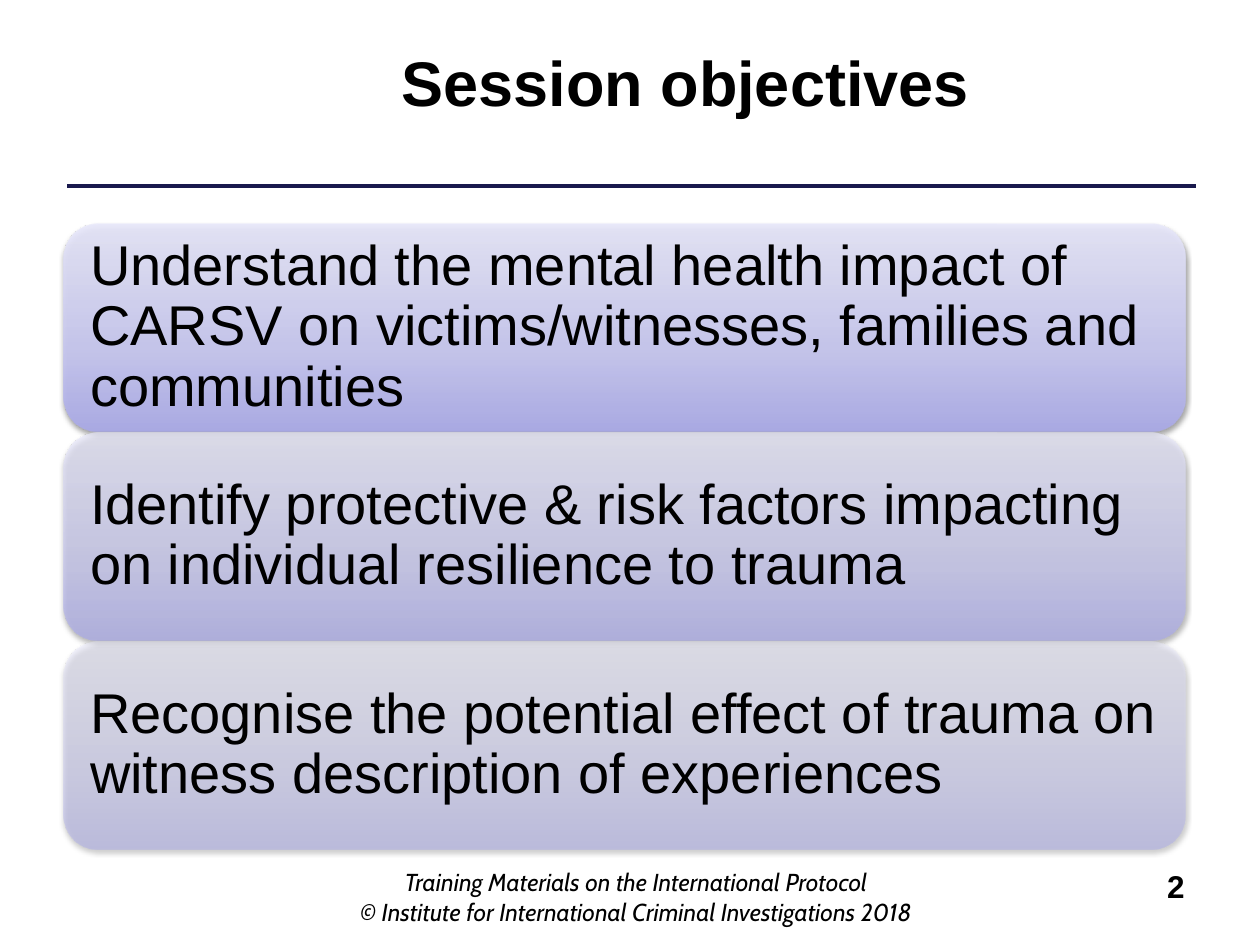
from lxml.etree import SubElement
from pptx import Presentation
from pptx.dml.color import RGBColor
from pptx.enum.shapes import MSO_CONNECTOR, MSO_SHAPE
from pptx.enum.text import MSO_ANCHOR, PP_ALIGN
from pptx.oxml.ns import qn
from pptx.util import Pt

EMU_PER_PX = 914400 / 126
BLACK, NAVY = "000000", "19194D"
CARD_STOPS = [(0, "A9A9E9"), (35, "C4C4EF"), (100, "E8E8FA")]


def px(length):
    return round(length * EMU_PER_PX)


def color(hex_text):
    return RGBColor.from_string(hex_text)


def add_alpha_color(parent, hex_text, percent):
    rgb = SubElement(parent, qn("a:srgbClr"), val=hex_text)
    SubElement(rgb, qn("a:alpha"), val=str(percent * 1000))


class SlideBuilder:
    font = "Arial"

    def __init__(self, slide):
        self.slide = slide

    def text(self, box, lines, size, font=None, bold=False, italic=False,
             align=PP_ALIGN.LEFT, anchor=MSO_ANCHOR.TOP, inset=None, spacing=None):
        frame = self.slide.shapes.add_textbox(*map(px, box)).text_frame
        frame.word_wrap = True
        frame.vertical_anchor = anchor
        if inset is not None:
            frame.margin_left = frame.margin_right = px(inset)
            frame.margin_top = frame.margin_bottom = px(inset)
        for index, line in enumerate(lines):
            paragraph = frame.add_paragraph() if index else frame.paragraphs[0]
            paragraph.alignment = align
            if spacing:
                paragraph.line_spacing = spacing
            run = paragraph.add_run()
            run.text = line
            run.font.name = font or self.font
            run.font.size = Pt(size)
            run.font.bold = bold
            run.font.italic = italic
            run.font.color.rgb = color(BLACK)

    def rule(self, left, right, y):
        line = self.slide.shapes.add_connector(
            MSO_CONNECTOR.STRAIGHT, px(left), px(y), px(right), px(y))
        line.line.color.rgb = color(NAVY)
        line.line.width = Pt(2.5)
        SubElement(line._element.spPr, qn("a:effectLst"))

    def card(self, box, opacity):
        card = self.slide.shapes.add_shape(MSO_SHAPE.ROUNDED_RECTANGLE, *map(px, box))
        card.fill.gradient()
        card.fill.gradient_angle = 90
        card.line.fill.background()
        card.shadow.inherit = False
        properties = card._element.spPr

        # Three translucent gradient stops
        stops = properties.find(".//" + qn("a:gsLst"))
        for stop in list(stops):
            stops.remove(stop)
        for position, shade in CARD_STOPS:
            stop = SubElement(stops, qn("a:gs"), pos=str(position * 1000))
            add_alpha_color(stop, shade, opacity)

        # Soft shadow below the card
        shadow = SubElement(properties.find(qn("a:effectLst")), qn("a:outerShdw"),
                            blurRad=str(Pt(3.1)), dist=str(Pt(1.6)),
                            dir="5400000", rotWithShape="0")
        add_alpha_color(shadow, BLACK, 38)


def main():
    presentation = Presentation()
    presentation.slide_width, presentation.slide_height = px(1260), px(945)
    builder = SlideBuilder(presentation.slides.add_slide(presentation.slide_layouts[6]))

    # Heading
    builder.rule(1196, 67, 186)
    builder.text((194, 37, 983, 89), ["Session objectives"], 36,
                 bold=True, align=PP_ALIGN.CENTER)

    # Objectives, each card fainter than the one above
    objectives = [
        "Understand the mental health impact of CARSV on victims/witnesses, "
        "families and communities",
        "Identify protective & risk factors impacting on individual resilience to trauma",
        "Recognise the potential effect of trauma on witness description of experiences",
    ]
    left, top, width, height, pitch, padding = 64, 224, 1122, 207, 209, 10
    for index, objective in enumerate(objectives):
        y = top + index * pitch
        builder.card((left, y, width, height), 90 - 20 * index)
        builder.text((left + padding, y + padding, width - 2 * padding, height - 2 * padding),
                     [objective], 32, anchor=MSO_ANCHOR.MIDDLE, inset=16, spacing=0.9)

    # Footer and slide number
    builder.text((343, 861, 586, 66),
                 ["Training Materials on the International Protocol",
                  "© Institute for International Criminal Investigations 2018"],
                 14, font="Cabin", italic=True, align=PP_ALIGN.CENTER)
    builder.text((903, 861, 294, 66), ["2"], 18, bold=True, align=PP_ALIGN.RIGHT)

    presentation.save("out.pptx")


if __name__ == "__main__":
    main()
